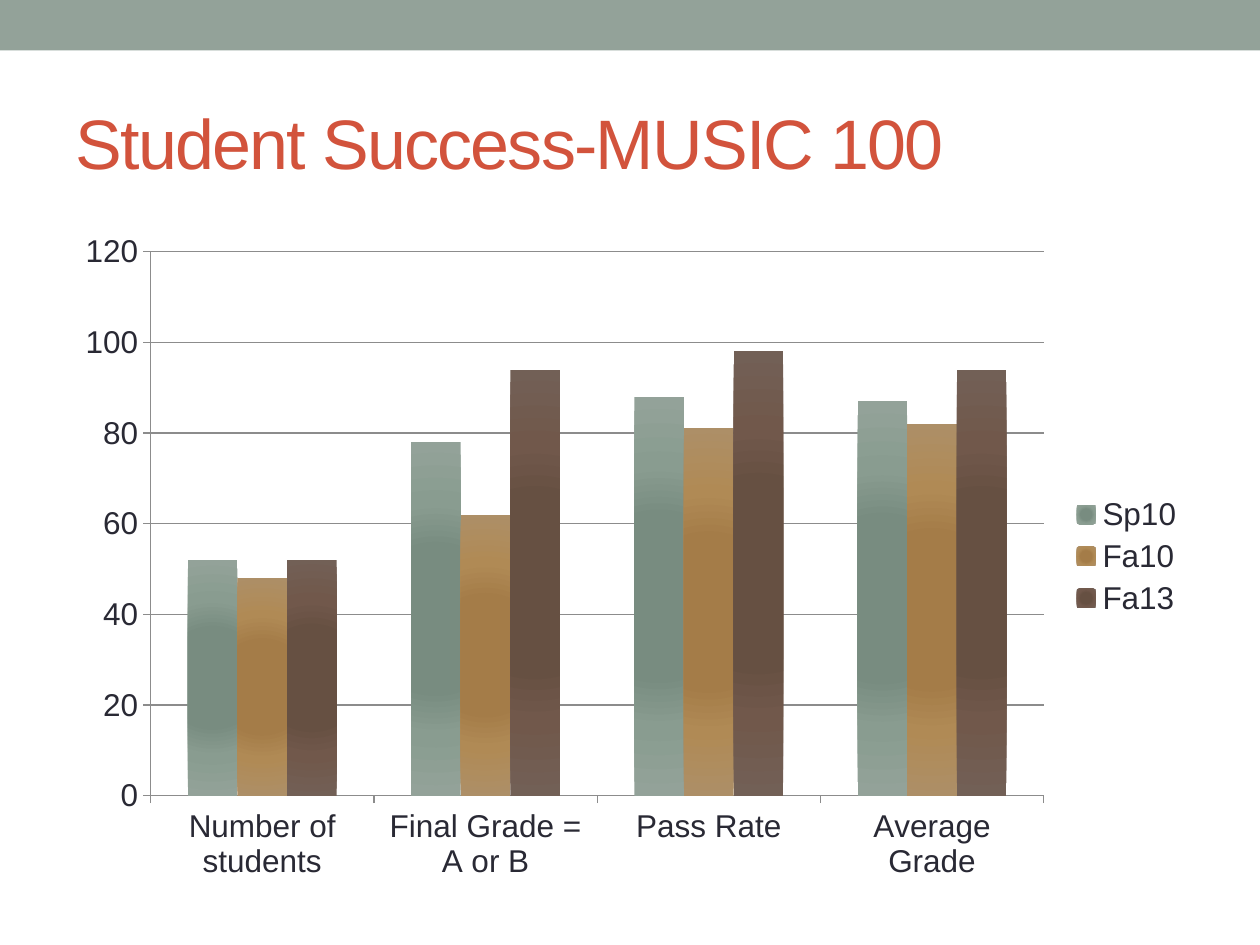
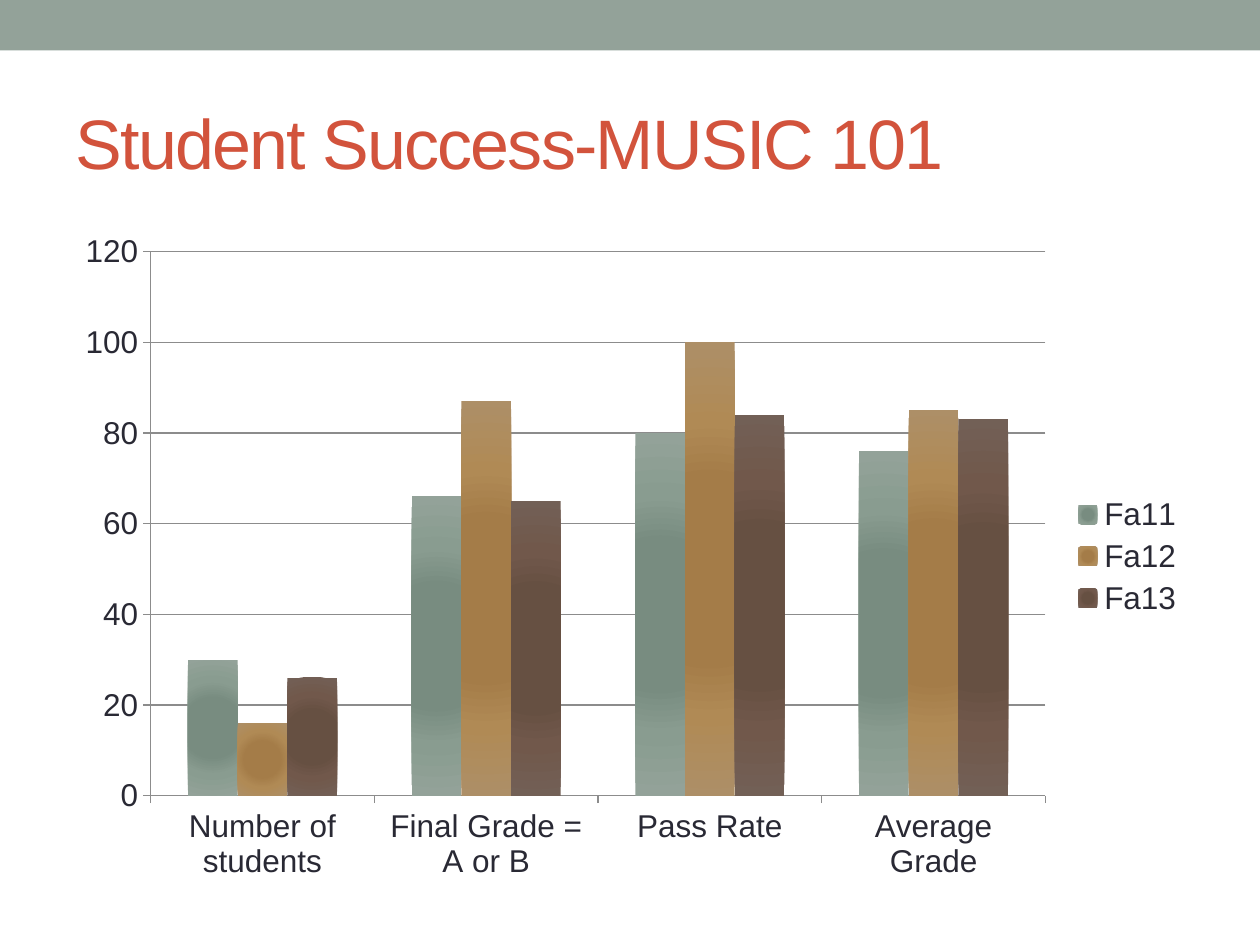
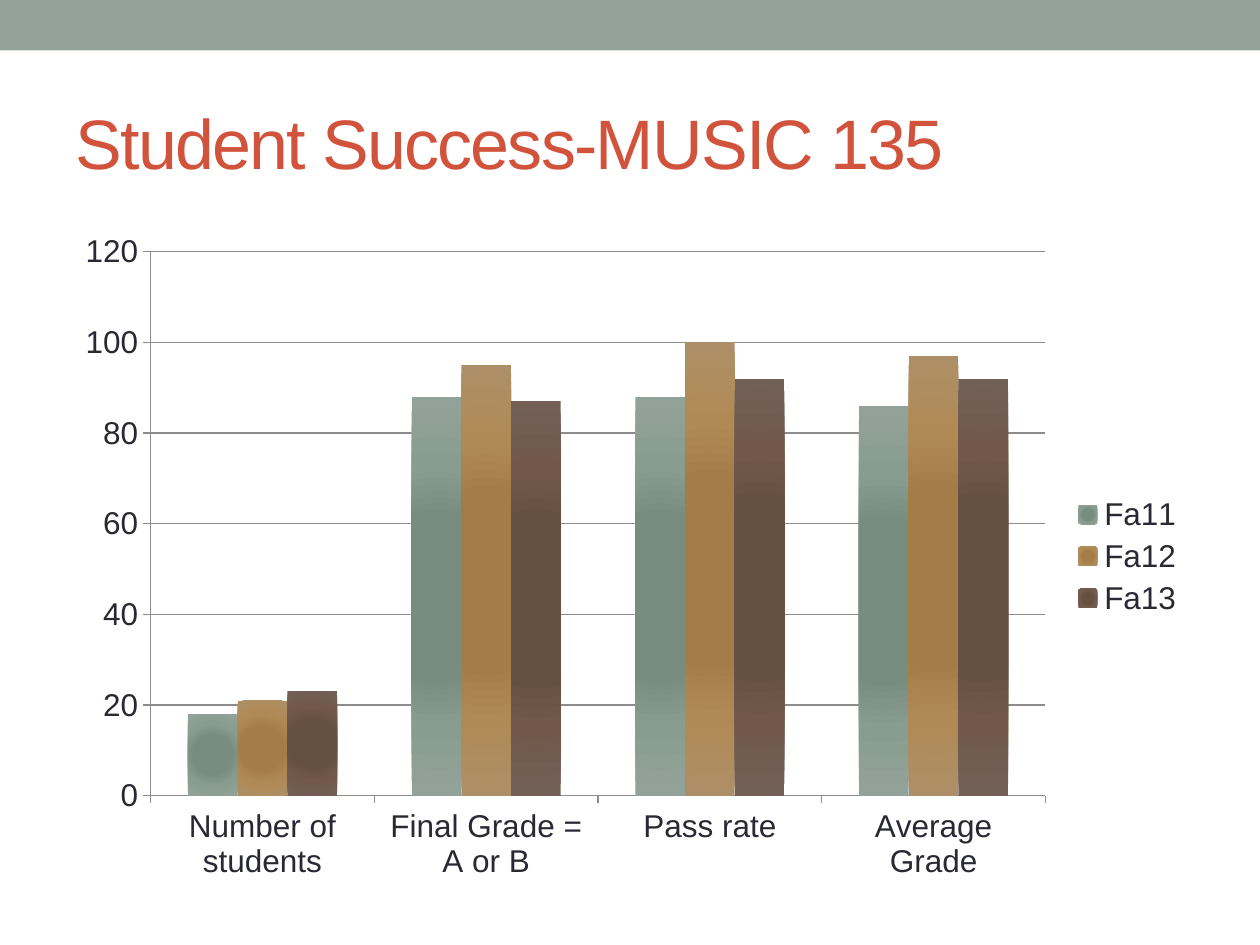
from dataclasses import dataclass

from lxml import etree
from pptx import Presentation
from pptx.chart.data import CategoryChartData
from pptx.dml.color import RGBColor
from pptx.enum.chart import XL_CHART_TYPE, XL_LEGEND_POSITION, XL_TICK_MARK
from pptx.enum.shapes import MSO_SHAPE
from pptx.enum.text import MSO_ANCHOR, MSO_AUTO_SIZE, PP_ALIGN
from pptx.oxml import parse_xml
from pptx.util import Pt

COLUMNS = XL_CHART_TYPE.COLUMN_CLUSTERED
LEGEND_RIGHT = XL_LEGEND_POSITION.RIGHT
TICK_OUT, TICK_NONE = XL_TICK_MARK.OUTSIDE, XL_TICK_MARK.NONE
RECTANGLE = MSO_SHAPE.RECTANGLE
MIDDLE, LEFT, NO_FIT = MSO_ANCHOR.MIDDLE, PP_ALIGN.LEFT, MSO_AUTO_SIZE.NONE
DRAWING_NS = "http://schemas.openxmlformats.org/drawingml/2006/main"
TITLE_ONLY = 5


@dataclass(frozen=True)
class Theme:
    font: str = "Arial"
    title_size: int = 40
    chart_size: int = 18
    title: str = "D2533C"
    text: str = "292934"
    band: str = "93A299"
    axis: str = "8C8C8C"
    # Centre, middle and edge colour of each term's columns
    terms: tuple = (
        ("788C80", "899C90", "93A299"),
        ("A47C48", "B08A55", "AD8F67"),
        ("665042", "71584B", "726056"),
    )


THEME = Theme()

# Boxes: left, top, width, height in points
SLIDE_WIDTH, SLIDE_HEIGHT = 720, 540
BAND_BOX = (0, 0, SLIDE_WIDTH, 28.8)
TITLE_BOX = (36, 42, 648, 78)
CHART_BOX = (36, 126, 648, 384)

# Course, name of the pass measure, values per term
COURSES = (
    ("MUSIC 100", "Pass Rate", {
        "Sp10": (52, 78, 88, 87),
        "Fa10": (48, 62, 81, 82),
        "Fa13": (52, 94, 98, 94),
    }),
    ("MUSIC 101", "Pass Rate", {
        "Fa11": (30, 66, 80, 76),
        "Fa12": (16, 87, 100, 85),
        "Fa13": (26, 65, 84, 83),
    }),
    ("MUSIC 135", "Pass rate", {
        "Fa11": (18, 88, 88, 86),
        "Fa12": (21, 95, 100, 97),
        "Fa13": (23, 87, 92, 92),
    }),
)


def rgb(value):
    return RGBColor.from_string(value)


def set_font(font, size, color):
    font.name = THEME.font
    font.size = Pt(size)
    font.color.rgb = rgb(color)


def add_master_band(slide, box):
    """Draw the top band and hand it to the master, so every slide shows it."""
    band = slide.shapes.add_shape(RECTANGLE, *map(Pt, box))
    band.shadow.inherit = False
    band.fill.solid()
    band.fill.fore_color.rgb = rgb(THEME.band)
    band.line.fill.background()
    slide.slide_layout.slide_master.element.cSld.spTree.insert(2, band.element)


def place_title(slide, box, wording):
    title = slide.shapes.title
    title.left, title.top, title.width, title.height = map(Pt, box)
    frame = title.text_frame
    frame.word_wrap = True
    frame.auto_size = NO_FIT
    frame.vertical_anchor = MIDDLE
    paragraph = frame.paragraphs[0]
    paragraph.alignment = LEFT
    run = paragraph.add_run()
    run.text = wording
    set_font(run.font, THEME.title_size, THEME.title)
    run.font.bold = False
    run.font._element.set("spc", "-100")


def glow_fill(series, colors):
    """Fill the columns with a gradient that runs out from their centre."""
    centre, middle, edge = colors
    stops = ((0, centre), (40, centre), (65, middle), (100, edge))
    gradient = parse_xml(
        f'<a:gradFill xmlns:a="{DRAWING_NS}" rotWithShape="1"><a:gsLst/>'
        '<a:path path="circle"><a:fillToRect l="50000" t="50000" r="50000" b="50000"/>'
        '</a:path></a:gradFill>')
    for position, color in stops:
        stop = etree.SubElement(gradient[0], f"{{{DRAWING_NS}}}gs", pos=str(position * 1000))
        etree.SubElement(stop, f"{{{DRAWING_NS}}}srgbClr", val=color)
    series.format.line.fill.background()
    series.format.fill.background()
    properties = series._element.spPr
    properties.replace(properties[0], gradient)


def style_line(line):
    line.color.rgb = rgb(THEME.axis)
    line.width = Pt(0.75)


def place_chart(slide, box, pass_label, terms):
    data = CategoryChartData()
    data.categories = ("Number of students", "Final Grade = A or B", pass_label, "Average Grade")
    for term, values in terms.items():
        data.add_series(term, values)
    chart = slide.shapes.add_chart(COLUMNS, *map(Pt, box), data).chart
    set_font(chart.font, THEME.chart_size, THEME.text)
    chart.has_title = False

    # Columns
    plot = chart.plots[0]
    plot.gap_width = 150
    plot.vary_by_categories = False
    for series, colors in zip(plot.series, THEME.terms):
        glow_fill(series, colors)

    # Axes and gridlines
    for axis in (chart.category_axis, chart.value_axis):
        axis.major_tick_mark = TICK_OUT
        axis.minor_tick_mark = TICK_NONE
        style_line(axis.format.line)
    scale = chart.value_axis
    scale.minimum_scale, scale.maximum_scale, scale.major_unit = 0, 120, 20
    scale.has_major_gridlines = True
    style_line(scale.major_gridlines.format.line)

    # Legend
    chart.has_legend = True
    chart.legend.position = LEGEND_RIGHT
    chart.legend.include_in_layout = False


def main():
    deck = Presentation()
    deck.slide_width, deck.slide_height = Pt(SLIDE_WIDTH), Pt(SLIDE_HEIGHT)
    for number, (course, pass_label, terms) in enumerate(COURSES):
        slide = deck.slides.add_slide(deck.slide_layouts[TITLE_ONLY])
        if number == 0:
            add_master_band(slide, BAND_BOX)
        place_title(slide, TITLE_BOX, f"Student Success-{course}")
        place_chart(slide, CHART_BOX, pass_label, terms)
    deck.save("out.pptx")


if __name__ == "__main__":
    main()
